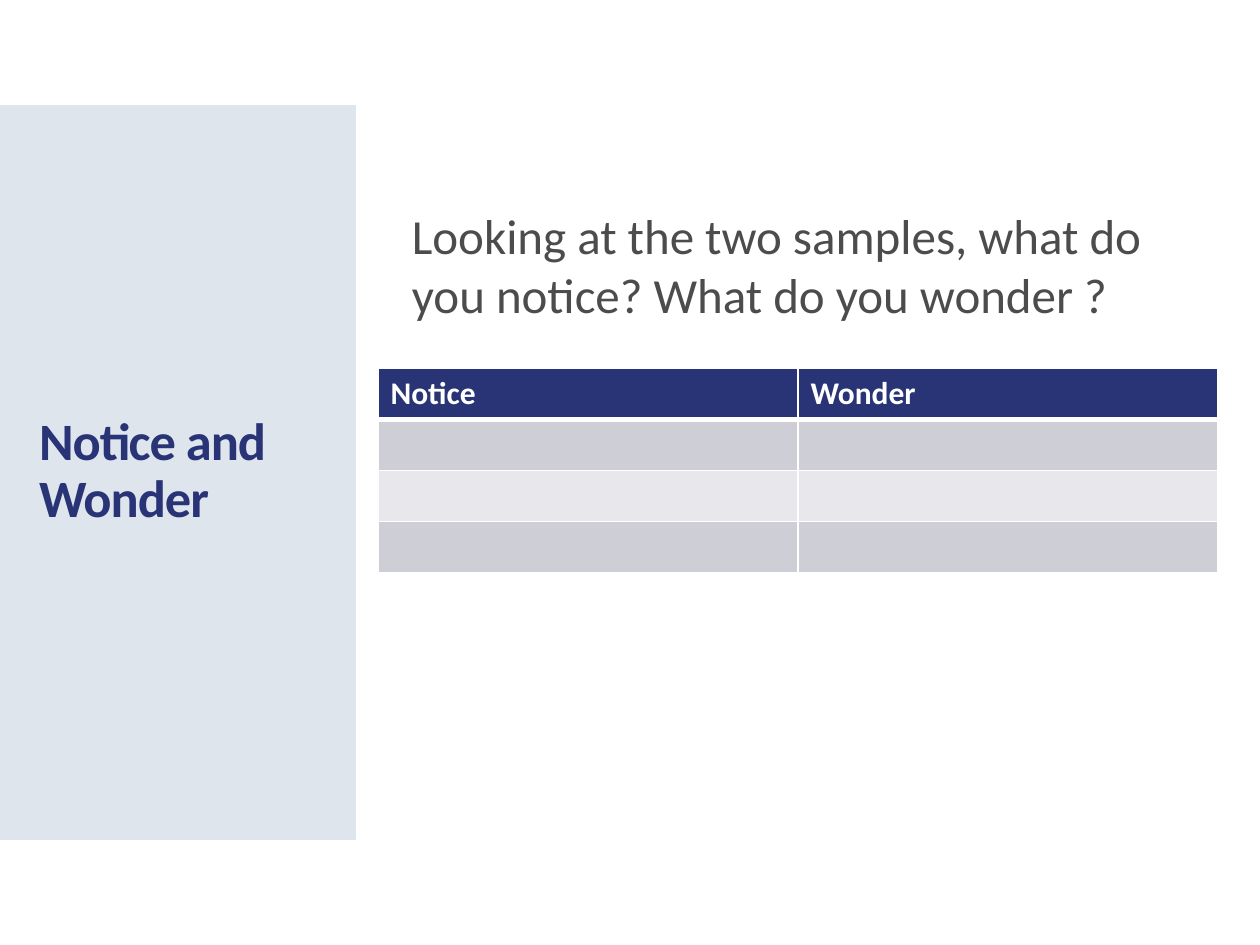
from pptx import Presentation
from pptx.dml.color import RGBColor
from pptx.enum import shapes, text
from pptx.oxml import parse_xml
from pptx.oxml.ns import nsdecls
from pptx.util import Pt

HUES = {"navy": "293476", "panel": "DFE5ED", "ink": "4C4C4C",
        "white": "FFFFFF", "odd": "CDCED6", "even": "E8E8EC"}
HEADS = ["Notice", "Wonder"]
ROWS = 4


def paint(fill, hue):
    fill.solid()
    fill.fore_color.rgb = RGBColor.from_string(HUES[hue])


def style(font, size, hue, bold=False):
    for key, val in {"name": "Calibri", "size": Pt(size), "bold": bold}.items():
        setattr(font, key, val)
    font.color.rgb = RGBColor.from_string(HUES[hue])


def place(shape, left, top, width, height):
    box = {"left": left, "top": top, "width": width, "height": height}
    for key, val in box.items():
        setattr(shape, key, Pt(val))


def add_panel(slide):
    """Draw the side panel and send it behind the title."""
    panel = slide.shapes.add_shape(
        shapes.MSO_SHAPE.RECTANGLE, Pt(0), Pt(60), Pt(203.4), Pt(420))
    panel.shadow.inherit = False
    paint(panel.fill, "panel")
    panel.line.fill.background()
    slide.shapes._spTree.insert(2, panel._element)


def set_text(shape, words, anchor, gap):
    """Fill a placeholder with one left-aligned paragraph and return its run."""
    frame = shape.text_frame
    frame.text = words
    form = {"word_wrap": True, "auto_size": text.MSO_AUTO_SIZE.NONE,
            "vertical_anchor": anchor}
    for key, val in form.items():
        setattr(frame, key, val)
    para = frame.paragraphs[0]
    form = {"alignment": text.PP_ALIGN.LEFT, "space_before": Pt(0),
            "line_spacing": gap}
    for key, val in form.items():
        setattr(para, key, val)
    return para.runs[0]


def set_title(title):
    place(title, 15.1, 88.6, 174.2, 362.2)
    run = set_text(title, "Notice and Wonder", text.MSO_ANCHOR.MIDDLE, 0.9)
    style(run.font, 30, "navy", True)
    run.font._element.set("spc", "-60")


def set_body(body):
    place(body, 228.2, 67.7, 432, 403.2)
    run = set_text(
        body, "Looking at the two samples, what do you notice? What do you wonder ?",
        text.MSO_ANCHOR.TOP, 1.0)
    body.text_frame.margin_top = Pt(50)
    props = body.text_frame.paragraphs[0]._p.get_or_add_pPr()
    props.set("marL", "0")
    props.set("indent", "0")
    props.append(parse_xml(f"<a:buNone {nsdecls('a')}/>"))
    style(run.font, 28, "ink")


def edge(cell, widths):
    """Draw white borders; widths maps each side to points, in schema order."""
    props = cell._tc.get_or_add_tcPr()
    for spot, (side, width) in enumerate(widths.items()):
        props.insert(spot, parse_xml(
            f'<a:ln{side} {nsdecls("a")} w="{Pt(width)}"><a:solidFill>'
            f'<a:srgbClr val="{HUES["white"]}"/></a:solidFill></a:ln{side}>'))


def add_grid(slide):
    grid = slide.shapes.add_table(
        ROWS, len(HEADS), Pt(216), Pt(210.4), Pt(480), Pt(29.2 * ROWS)).table
    for row in range(ROWS):
        hue = "navy" if row == 0 else "odd" if row % 2 else "even"
        for col, head in enumerate(HEADS):
            cell = grid.cell(row, col)
            paint(cell.fill, hue)
            edge(cell, {"L": 1, "R": 1, "T": 3 if row == 1 else 1,
                        "B": 3 if row == 0 else 1})
            if row == 0:
                cell.text = head
                style(cell.text_frame.paragraphs[0].runs[0].font,
                      18, "white", True)


def main():
    deck = Presentation()
    deck.slide_width, deck.slide_height = Pt(720), Pt(540)
    slide = deck.slides.add_slide(deck.slide_layouts[1])
    paint(slide.background.fill, "white")
    add_panel(slide)
    set_title(slide.shapes.title)
    set_body(slide.placeholders[1])
    add_grid(slide)
    deck.save("out.pptx")


if __name__ == "__main__":
    main()
